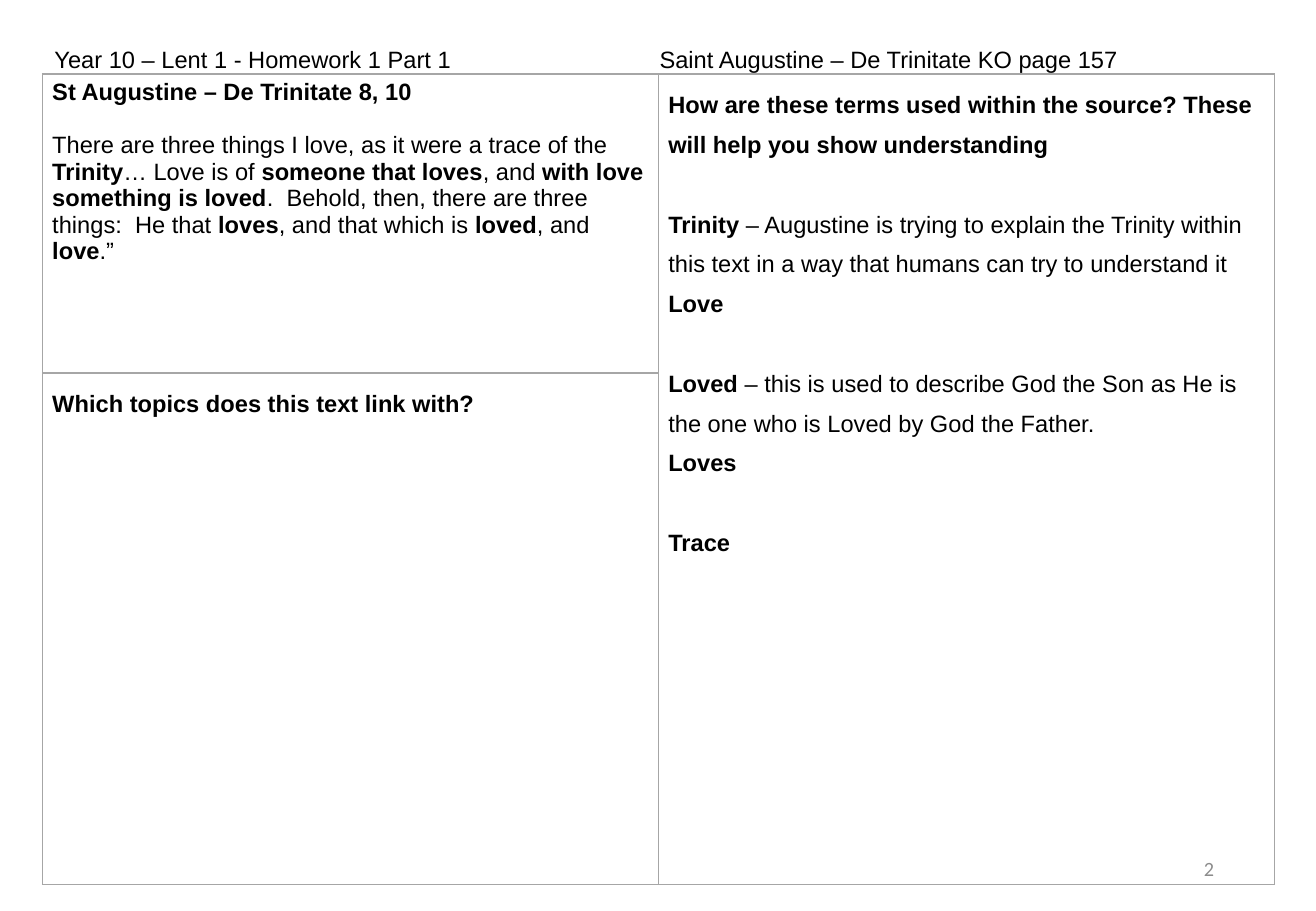
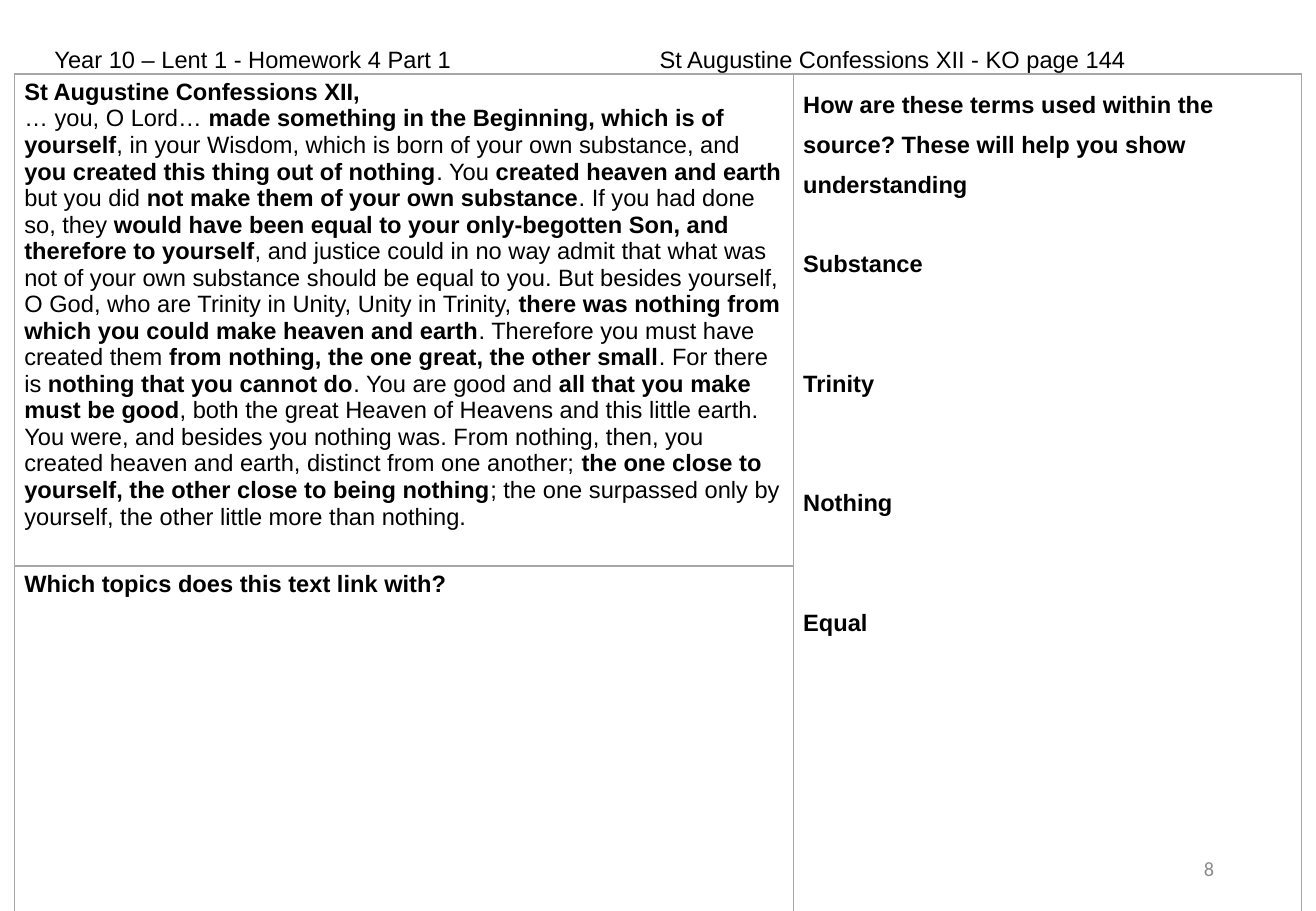
"""Build two homework slides, each with a header, a source table and a page number."""
from dataclasses import dataclass

from lxml import etree
from pptx import Presentation
from pptx.dml.color import RGBColor
from pptx.enum.shapes import MSO_SHAPE
from pptx.enum.text import MSO_ANCHOR, PP_ALIGN
from pptx.oxml.ns import qn
from pptx.util import Inches, Pt

RECT = MSO_SHAPE.RECTANGLE
TOP, MIDDLE = MSO_ANCHOR.TOP, MSO_ANCHOR.MIDDLE
LEFT, RIGHT = PP_ALIGN.LEFT, PP_ALIGN.RIGHT


@dataclass(frozen=True)
class Theme:
    ink: str = "000000"
    paper: str = "FFFFFF"
    rule: str = "A6A6A6"
    muted: str = "8C8C8C"
    font: str = "Arial"
    foot: str = "Calibri"
    body: float = 14
    small: float = 12
    line: float = 15.75
    wide: float = 1.5


THEME = Theme()


def write(frame, lines, size=THEME.body, font=THEME.font, color=THEME.ink,
          space=1.0, align=LEFT, anchor=TOP, tab=None):
    frame.word_wrap = True
    frame.vertical_anchor = anchor
    for i, (gap, text) in enumerate(lines):
        para = frame.paragraphs[0] if i == 0 else frame.add_paragraph()
        para.alignment = align
        para.line_spacing = space
        para.space_before = Pt(gap * space * THEME.line)
        if tab:
            stops = etree.SubElement(para._p.get_or_add_pPr(), qn("a:tabLst"))
            etree.SubElement(stops, qn("a:tab"), pos=str(Inches(tab)), algn="l")
        for j, part in enumerate(text.split("**")):
            if part:
                run = para.add_run()
                run.text = part
                run.font.size = Pt(size)
                run.font.name = font
                run.font.bold = j % 2 == 1
                run.font.color.rgb = RGBColor.from_string(color)


def border(cell):
    props = cell._tc.get_or_add_tcPr()
    for side in ("lnL", "lnR", "lnT", "lnB"):
        line = etree.SubElement(props, qn(f"a:{side}"), w=str(Pt(1)))
        fill = etree.SubElement(line, qn("a:solidFill"))
        etree.SubElement(fill, qn("a:srgbClr"), val=THEME.rule)


class Deck:
    def __init__(self):
        self.show = Presentation()
        self.show.slide_width = Inches(10.83)
        self.show.slide_height = Inches(7.5)
        self.slide = None

    def start(self):
        self.slide = self.show.slides.add_slide(self.show.slide_layouts[6])

    def number(self, text):
        box = self.slide.shapes.add_textbox(
            Inches(7.65), Inches(6.95), Inches(2.44), Inches(0.4))
        write(box.text_frame, [(0, text)], size=THEME.small, font=THEME.foot,
              color=THEME.muted, align=RIGHT, anchor=MIDDLE)

    def header(self, task, topic):
        band = self.slide.shapes.add_shape(
            RECT, Inches(0.35), Inches(0.2), Inches(10.36), Inches(0.38))
        band.shadow.inherit = False
        band.fill.solid()
        band.fill.fore_color.rgb = RGBColor.from_string(THEME.paper)
        band.line.fill.background()
        write(band.text_frame, [(0, f"{task}\t{topic}")], space=THEME.wide, tab=4.98)

    def table(self, left, cols, rows, source, terms, links, space):
        grid = self.slide.shapes.add_table(
            2, 2, Inches(left), Inches(0.61), Inches(sum(cols)), Inches(sum(rows))).table
        grid.first_row = grid.horz_banding = False
        for col, width in zip(grid.columns, cols):
            col.width = Inches(width)
        for row, height in zip(grid.rows, rows):
            row.height = Inches(height)
        for cell in grid.iter_cells():
            cell.margin_left = cell.margin_right = Inches(0.08)
            cell.margin_top = cell.margin_bottom = Inches(0.04)
            border(cell)
            cell.fill.background()
        grid.cell(0, 1).merge(grid.cell(1, 1))
        write(grid.cell(0, 0).text_frame, source)
        write(grid.cell(0, 1).text_frame, terms, space=THEME.wide)
        write(grid.cell(1, 0).text_frame, links, space=space)


ASK = (0, "**How are these terms used within the source? "
          "These will help you show understanding**")
LINKS = [(0, "**Which topics does this text link with?**")]

TRINITY = [
    (0, "**St Augustine – De Trinitate 8, 10**"),
    (1, "There are three things I love, as it were a trace of the **Trinity**… "
        "Love is of **someone that loves**, and **with love something is loved**.  "
        "Behold, then, there are three things:  He that **loves**, and that which is "
        "**loved**, and **love**.”"),
]
LOVE = [
    ASK,
    (1, "**Trinity** – Augustine is trying to explain the Trinity within this text "
        "in a way that humans can try to understand it"),
    (0, "**Love**"),
    (1, "**Loved **– this is used to describe God the Son as He is the one who is "
        "Loved by God the Father."),
    (0, "**Loves**"),
    (1, "**Trace**"),
]
CONFESS = [
    (0, "**St Augustine Confessions XII,**"),
    (0, " ".join([
        "… you, O Lord… **made something in the Beginning, which is of yourself**, "
        "in your Wisdom, which is born of your own substance, and **you created this "
        "thing out of nothing**.",
        "You **created heaven and earth** but you did **not make them of your own "
        "substance**.",
        "If you had done so, they **would have been equal to your only-begotten Son, "
        "and therefore to yourself**, and justice could in no way admit that what was "
        "not of your own substance should be equal to you.",
        "But besides yourself, O God, who are Trinity in Unity, Unity in Trinity, "
        "**there was nothing from which you could make heaven and earth**.",
        "Therefore you must have created them **from nothing, the one great, the other "
        "small**.",
        "For there is **nothing that you cannot do**.",
        "You are good and **all that you make must be good**, both the great Heaven of "
        "Heavens and this little earth.",
        "You were, and besides you nothing was.",
        "From nothing, then, you created heaven and earth, distinct from one another; "
        "**the one close to yourself, the other close to being nothing**; the one "
        "surpassed only by yourself, the other little more than nothing.",
    ])),
]
WORDS = [ASK, (1, "**Substance**")] + [
    (2, f"**{word}**") for word in ("Trinity", "Nothing", "Equal")]

PAGES = [
    ("2", "Year 10 – Lent 1 - Homework 1 Part 1",
     "Saint Augustine – De Trinitate KO page 157",
     (0.35, (5.07, 5.07), (2.46, 4.01), TRINITY, LOVE, LINKS, THEME.wide)),
    ("8", "Year 10 – Lent 1 - Homework 4 Part 1",
     "St Augustine Confessions XII - KO page 144",
     (0.12, (6.41, 4.18), (3.89, 3), CONFESS, WORDS, LINKS, 1.0)),
]


def main():
    deck = Deck()
    for page, task, topic, table in PAGES:
        deck.start()
        deck.number(page)
        deck.header(task, topic)
        deck.table(*table)
    deck.show.save("out.pptx")


if __name__ == "__main__":
    main()
